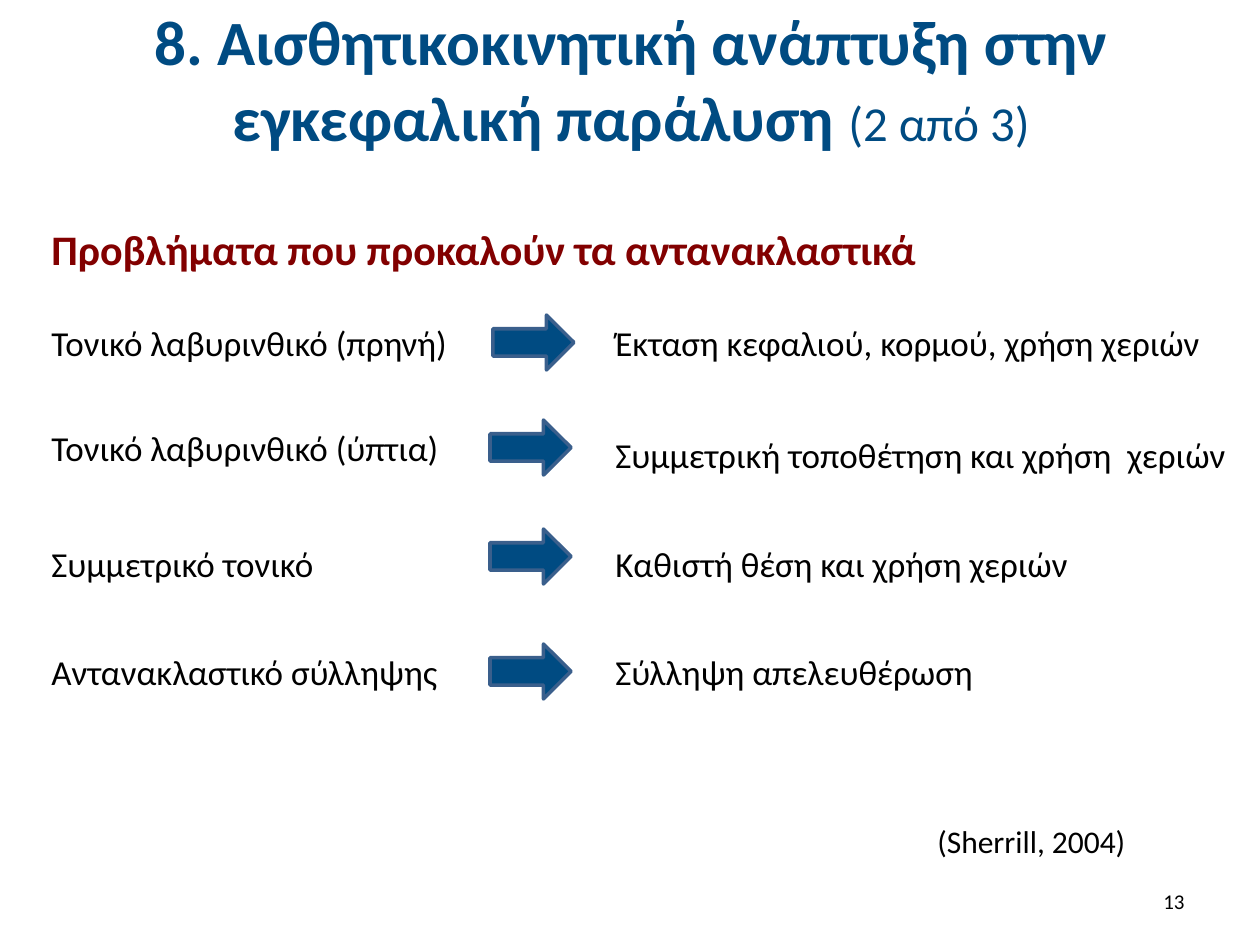
import pptx
import pptx.dml.color
import pptx.enum.shapes
import pptx.enum.text
import pptx.util

EMU_PER_PX = 914400 // 126
ALIGN = pptx.enum.text.PP_ALIGN
ANCHOR = pptx.enum.text.MSO_ANCHOR


def px(length):
    return pptx.util.Emu(length * EMU_PER_PX)


def color(hex_text):
    return pptx.dml.color.RGBColor.from_string(hex_text)


class SlideBuilder:
    font = "Calibri"
    blue = "004B82"
    red = "820000"
    black = "000000"
    outline = "3A5F8C"

    def __init__(self, slide):
        self.slide = slide

    def text(self, left, top, width, height, runs, align=ALIGN.LEFT,
             anchor=ANCHOR.TOP, line_spacing=None):
        box = self.slide.shapes.add_textbox(px(left), px(top), px(width), px(height))
        frame = box.text_frame
        frame.word_wrap = True
        frame.vertical_anchor = anchor
        para = frame.paragraphs[0]
        para.alignment = align
        if line_spacing:
            para.line_spacing = line_spacing
        for content, size, hex_text, bold in runs:
            span = para.add_run()
            span.text = content
            span.font.name = self.font
            span.font.size = pptx.util.Pt(size)
            span.font.bold = bold
            span.font.color.rgb = color(hex_text)

    def body(self, left, top, width, content, line_spacing=None):
        self.text(left, top, width, 55, [(content, 20, self.black, False)],
                  line_spacing=line_spacing)

    def arrow(self, left, top):
        shape = self.slide.shapes.add_shape(
            pptx.enum.shapes.MSO_SHAPE.RIGHT_ARROW, px(left), px(top), px(81), px(55))
        shape.shadow.inherit = False
        shape.fill.solid()
        shape.fill.fore_color.rgb = color(self.blue)
        shape.line.color.rgb = color(self.outline)
        shape.line.width = pptx.util.Pt(2)


def main():
    deck = pptx.Presentation()
    deck.slide_width, deck.slide_height = px(1260), px(945)
    page = SlideBuilder(deck.slides.add_slide(deck.slide_layouts[6]))

    page.text(64, 16, 1134, 125, [
        ("8. Αισθητικοκινητική ανάπτυξη στην εγκεφαλική παράλυση ", 36, page.blue, True),
        ("(2 από 3)", 27.9, page.blue, False),
    ], ALIGN.CENTER, ANCHOR.MIDDLE)
    page.text(39, 217, 1043, 63, [
        ("Προβλήματα που προκαλούν τα αντανακλαστικά", 24, page.red, True)])

    rows = [
        (315, "Τονικό λαβυρινθικό (πρηνή)", 493, 315,
         315, "Έκταση κεφαλιού, κορμού, χρήση χεριών", None),
        (420, "Τονικό λαβυρινθικό (ύπτια)", 490, 420,
         415, "Συμμετρική τοποθέτηση και χρήση  χεριών", 1.3),
        (536, "Συμμετρικό τονικό", 490, 529,
         536, "Καθιστή θέση και χρήση χεριών", None),
        (644, "Αντανακλαστικό σύλληψης", 490, 644,
         644, "Σύλληψη απελευθέρωση", None),
    ]
    for reflex_top, reflex, arrow_left, arrow_top, problem_top, problem, spacing in rows:
        page.body(39, reflex_top, 450, reflex)
        page.body(603, problem_top, 645, problem, spacing)
        page.arrow(arrow_left, arrow_top)

    page.text(925, 816, 284, 50, [("(Sherrill, 2004)", 18, page.black, False)])
    page.text(903, 876, 294, 50, [("13", 12, page.black, False)],
              ALIGN.RIGHT, ANCHOR.MIDDLE)
    deck.save("out.pptx")


if __name__ == "__main__":
    main()
